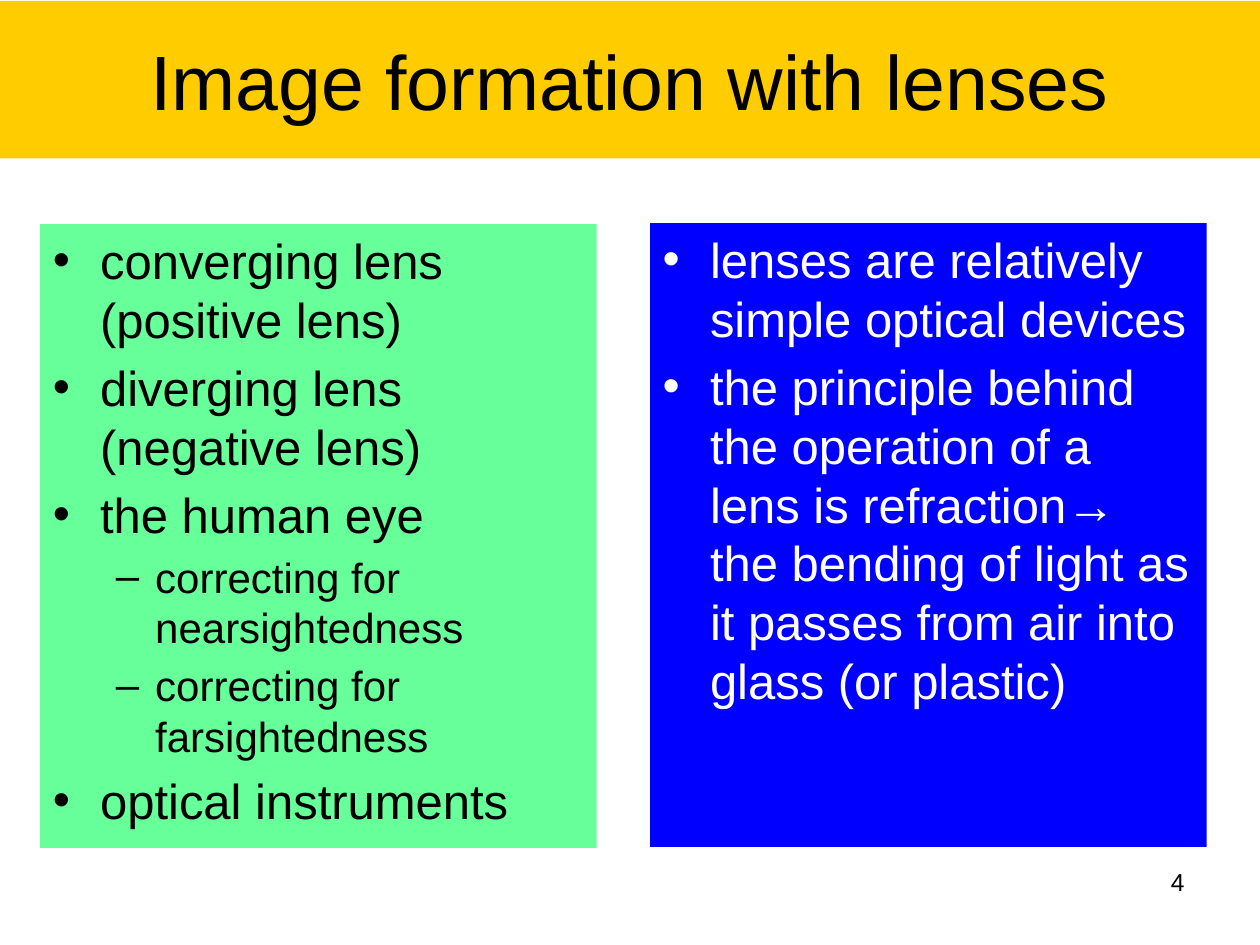
import pptx
import pptx.dml.color
import pptx.enum.text
import pptx.oxml
import pptx.oxml.ns
import pptx.util

Pt = pptx.util.Pt
ALIGN = pptx.enum.text.PP_ALIGN
ANCHOR = pptx.enum.text.MSO_ANCHOR
LEVELS = [(28, "•", 27, 27), (24, "–", 58.5, 22.5)]
TOPICS = [
    ("converging lens (positive lens)", 0),
    ("diverging lens (negative lens)", 0),
    ("the human eye", 0),
    ("correcting for nearsightedness", 1),
    ("correcting for farsightedness", 1),
    ("optical instruments", 0),
]
PRINCIPLES = [
    ("lenses are relatively simple optical devices", 0),
    ("the principle behind the operation of a lens is refraction→ the bending "
     "of light as it passes from air into glass (or plastic)", 0),
]


def paint(color_format, color):
    color_format.rgb = pptx.dml.color.RGBColor.from_string(color)


def place(shape, box, fill=None):
    shape.left, shape.top, shape.width, shape.height = map(Pt, box)
    if fill:
        shape.fill.solid()
        paint(shape.fill.fore_color, fill)
    frame = shape.text_frame
    frame.word_wrap = True
    frame.auto_size = pptx.enum.text.MSO_AUTO_SIZE.NONE
    frame.vertical_anchor = ANCHOR.TOP
    return frame


def style(para, size, color, alignment):
    para.alignment = alignment
    para.font.name = "Arial"
    para.font.size = Pt(size)
    paint(para.font.color, color)


def set_bullet(para, mark, margin, hanging):
    properties = para._p.get_or_add_pPr()
    properties.set("marL", str(Pt(margin)))
    properties.set("indent", str(-Pt(hanging)))
    bullet = pptx.oxml.parse_xml(
        f'<a:buChar {pptx.oxml.ns.nsdecls("a")} char="{mark}"/>')
    properties.insert_element_before(bullet, "a:tabLst", "a:defRPr", "a:extLst")


def add_title(page, box, text):
    frame = place(page.shapes.title, box, "FFCC00")
    frame.vertical_anchor = ANCHOR.MIDDLE
    frame.text = text
    style(frame.paragraphs[0], 44, "000000", ALIGN.CENTER)


def add_list(placeholder, box, items, fill, color):
    frame = place(placeholder, box, fill)
    for position, (text, level) in enumerate(items):
        para = frame.add_paragraph() if position else frame.paragraphs[0]
        size, mark, margin, hanging = LEVELS[level]
        para.text = text
        para.level = level
        para.space_before = Pt(size * 0.19)
        style(para, size, color, ALIGN.LEFT)
        set_bullet(para, mark, margin, hanging)


def add_page_number(page, box, number):
    frame = place(page.shapes.add_textbox(0, 0, 0, 0), box)
    frame.text = number
    style(frame.paragraphs[0], 14, "000000", ALIGN.RIGHT)


def main():
    deck = pptx.Presentation()
    deck.slide_width, deck.slide_height = Pt(720), Pt(540)
    page = deck.slides.add_slide(deck.slide_layouts.get_by_name("Two Content"))
    add_title(page, (-0.5, 0.5, 721, 90), "Image formation with lenses")
    add_list(page.placeholders[1], (23, 128, 318, 356.5), TOPICS, "66FF99", "000000")
    add_list(page.placeholders[2], (371.5, 127.5, 318, 356.5), PRINCIPLES, "0000FF", "FFFFFF")
    add_page_number(page, (516, 492, 168, 37.5), "4")
    deck.save("out.pptx")


if __name__ == "__main__":
    main()
